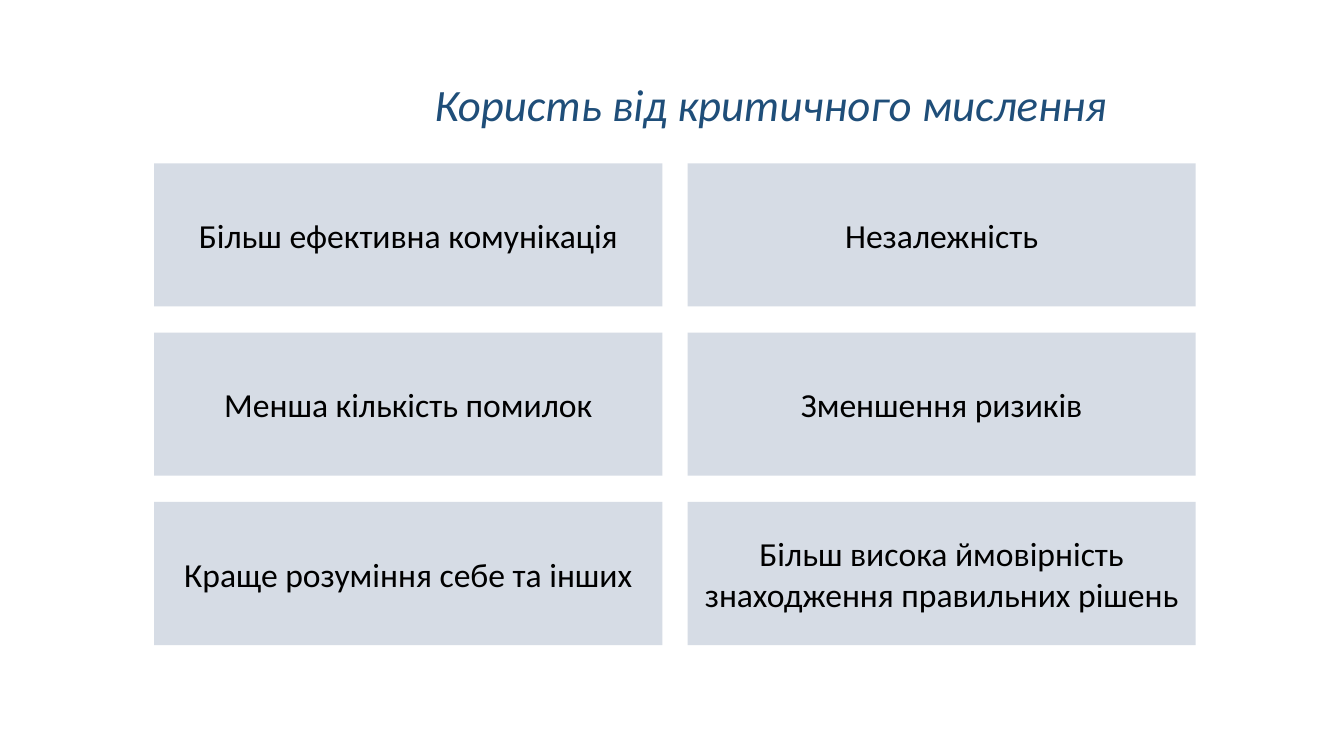
from pptx import Presentation
from pptx import util as u
from pptx.dml.color import RGBColor
from pptx.enum import shapes, text

NAVY = RGBColor(0x1F, 0x4E, 0x79)
PALE_BLUE = RGBColor(0xD6, 0xDC, 0xE5)
BLACK = RGBColor(0, 0, 0)
FONT = "Calibri"

deck = Presentation()
deck.slide_width, deck.slide_height = u.Inches(13.33), u.Inches(7.5)
slide = deck.slides.add_slide(deck.slide_layouts[6])

# Heading
heading = slide.shapes.add_textbox(
    u.Inches(4.21), u.Inches(0.82), u.Inches(8.16), u.Inches(0.49)).text_frame
heading.word_wrap = True
heading.vertical_anchor = text.MSO_ANCHOR.MIDDLE
heading.text = "Користь від критичного мислення"
line = heading.paragraphs[0]
line.line_spacing = 0.9
line.font.name, line.font.size = FONT, u.Pt(32)
line.font.italic = True
line.font.color.rgb = NAVY

# Grid of benefits: two columns, filled row by row
benefits = [
    "Більш ефективна комунікація", "Незалежність",
    "Менша кількість помилок", "Зменшення ризиків",
    "Краще розуміння себе та інших",
    "Більш висока ймовірність знаходження правильних рішень",
]
COLUMNS = 2
GRID_LEFT, GRID_TOP = 1.53, 1.62
CARD_WIDTH, CARD_HEIGHT = 5.04, 1.42
COLUMN_GAP, ROW_GAP = 0.25, 0.26

for index, benefit in enumerate(benefits):
    row, column = divmod(index, COLUMNS)
    card = slide.shapes.add_shape(
        shapes.MSO_SHAPE.RECTANGLE,
        u.Inches(GRID_LEFT + column * (CARD_WIDTH + COLUMN_GAP)),
        u.Inches(GRID_TOP + row * (CARD_HEIGHT + ROW_GAP)),
        u.Inches(CARD_WIDTH), u.Inches(CARD_HEIGHT))
    card.shadow.inherit = False
    card.fill.solid()
    card.fill.fore_color.rgb = PALE_BLUE
    card.line.fill.background()
    card.text_frame.word_wrap = True
    card.text_frame.vertical_anchor = text.MSO_ANCHOR.MIDDLE
    card.text_frame.text = benefit
    label = card.text_frame.paragraphs[0]
    label.alignment = text.PP_ALIGN.CENTER
    label.font.name, label.font.size = FONT, u.Pt(24)
    label.font.color.rgb = BLACK

deck.save("out.pptx")
